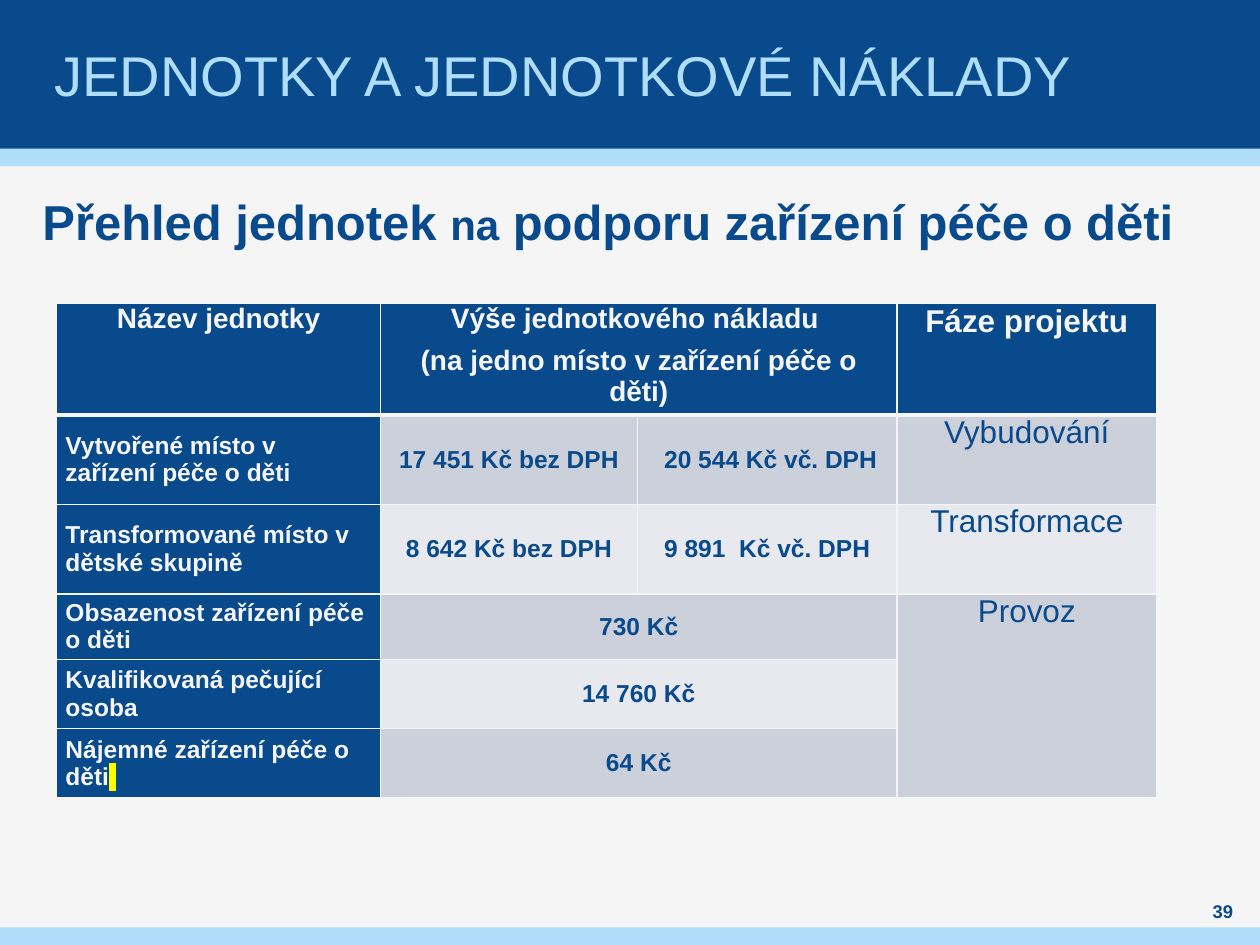
from dataclasses import dataclass

from lxml import etree
from pptx import Presentation
from pptx.dml.color import RGBColor
from pptx.enum.shapes import MSO_SHAPE
from pptx.enum.text import MSO_ANCHOR, PP_ALIGN
from pptx.oxml.ns import qn
from pptx.util import Inches, Pt

RECTANGLE = MSO_SHAPE.RECTANGLE
TOP, MIDDLE = MSO_ANCHOR.TOP, MSO_ANCHOR.MIDDLE
LEFT, CENTER = PP_ALIGN.LEFT, PP_ALIGN.CENTER


@dataclass(frozen=True)
class Theme:
    """Colours, font and type sizes of the deck."""
    font: str = "Arial"
    navy: str = "084A8B"
    sky: str = "AFDDFA"
    paper: str = "F5F5F5"
    band_dark: str = "CCD0DA"
    band_light: str = "E7E9EE"
    marker: str = "FFFF00"
    title: float = 32
    heading: float = 28
    heading_small: float = 24
    phase: float = 18
    header: float = 16
    body: float = 14
    number: float = 10.5


THEME = Theme()
COLUMNS = (2.57, 2.04, 2.06, 2.06)
ROWS = (0.88, 0.71, 0.71, 0.52, 0.55, 0.55)
HEADER = (
    (0, ("Název jednotky",), THEME.header),
    (1, ("Výše jednotkového nákladu ", "(na jedno místo v zařízení péče o děti)"), THEME.header),
    (3, ("Fáze projektu",), THEME.phase),
)
UNITS = (
    ("Vytvořené místo v zařízení péče o děti", ("17 451 Kč bez DPH", " 20 544 Kč vč. DPH"), "Vybudování"),
    ("Transformované místo v dětské skupině", ("8 642 Kč bez DPH", "9 891  Kč vč. DPH"), "Transformace"),
    ("Obsazenost zařízení péče o děti", ("730 Kč",), "Provoz"),
    ("Kvalifikovaná pečující osoba", ("14 760 Kč",), None),
    ("Nájemné zařízení péče o děti", ("64 Kč",), None),
)


def add_span(para, text, size, color, bold=False):
    """Append one styled run to a paragraph."""
    span = para.add_run()
    span.text = text
    span.font.name = THEME.font
    span.font.size = Pt(size)
    span.font.bold = bold
    span.font.color.rgb = RGBColor.from_string(color)
    return span


def highlight(span, color):
    """Put a marker colour behind a run."""
    mark = etree.Element(qn("a:highlight"))
    etree.SubElement(mark, qn("a:srgbClr"), val=color)
    span.font._element.find(qn("a:solidFill")).addnext(mark)


def add_bar(page, box, color):
    """Draw a plain band."""
    bar = page.shapes.add_shape(RECTANGLE, *map(Inches, box))
    bar.shadow.inherit = False
    bar.fill.solid()
    bar.fill.fore_color.rgb = RGBColor.from_string(color)
    bar.line.fill.background()


def add_text(page, box, spans, align, anchor=MIDDLE, insets=(0, 0)):
    """Place one paragraph of (text, size, color, bold) runs."""
    frame = page.shapes.add_textbox(*map(Inches, box)).text_frame
    frame.word_wrap = True
    frame.vertical_anchor = anchor
    frame.margin_left = frame.margin_right = Inches(insets[0])
    frame.margin_top = frame.margin_bottom = Inches(insets[1])
    para = frame.paragraphs[0]
    para.alignment = align
    for span in spans:
        add_span(para, *span)


def style_cell(cell, fill, bottom=1):
    """Give a cell its borders, insets and fill."""
    properties = cell._tc.get_or_add_tcPr()
    for side, width in (("L", 1), ("R", 1), ("T", 1), ("B", bottom)):
        line = etree.SubElement(properties, qn(f"a:ln{side}"), w=str(Pt(width)))
        paint = etree.SubElement(line, qn("a:solidFill"))
        etree.SubElement(paint, qn("a:srgbClr"), val=THEME.paper)
    cell.margin_left = cell.margin_right = Inches(0.07)
    cell.margin_top = cell.margin_bottom = 0
    cell.fill.solid()
    cell.fill.fore_color.rgb = RGBColor.from_string(fill)


def write_cell(cell, lines, size, color, bold=True, align=CENTER, anchor=MIDDLE):
    """Write each line as a paragraph and return the last one."""
    cell.vertical_anchor = anchor
    frame = cell.text_frame
    for index, line in enumerate(lines):
        para = frame.add_paragraph() if index else frame.paragraphs[0]
        para.alignment = align
        para.space_before = para.space_after = Pt(3)
        add_span(para, line, size, color, bold)
    return para


def add_unit_table(page, box):
    """Build the table of units, unit costs and project phases."""
    table = page.shapes.add_table(len(ROWS), len(COLUMNS), *map(Inches, box)).table
    for column, width in zip(table.columns, COLUMNS):
        column.width = Inches(width)
    for row, height in zip(table.rows, ROWS):
        row.height = Inches(height)
    for row in range(len(ROWS)):
        band = THEME.band_dark if row % 2 else THEME.band_light
        for column in range(len(COLUMNS)):
            fill = THEME.navy if row == 0 or column == 0 else band
            style_cell(table.cell(row, column), fill, 1 if row else 3)
    for row in (0, 3, 4, 5):
        table.cell(row, 1).merge(table.cell(row, 2))
    table.cell(3, 3).merge(table.cell(5, 3))

    for column, lines, size in HEADER:
        write_cell(table.cell(0, column), lines, size, THEME.paper, anchor=TOP)
    for row, (unit, costs, phase) in enumerate(UNITS, 1):
        para = write_cell(table.cell(row, 0), (unit,), THEME.body, THEME.paper, align=LEFT)
        for column, cost in enumerate(costs, 1):
            write_cell(table.cell(row, column), (cost,), THEME.body, THEME.navy)
        if phase:
            write_cell(table.cell(row, 3), (phase,), THEME.phase, THEME.navy, False, anchor=TOP)
    highlight(add_span(para, " ", THEME.body, THEME.paper, True), THEME.marker)


def add_banner(page, box):
    """Draw the title banner with its lower stripe."""
    left, top, width, height = box
    add_bar(page, (left, top + height, width, 0.14), THEME.sky)
    add_bar(page, box, THEME.navy)
    add_text(page, (left + 0.39, top, width - 0.79, height),
             [("JEDNOTKY A JEDNOTKOVÉ NÁKLADY", THEME.title, THEME.sky)], LEFT, insets=(0.04, 0))


def add_footer(page, box):
    """Draw the bottom stripe and the page number above it."""
    left, top, width, height = box
    add_bar(page, box, THEME.sky)
    add_text(page, (left + width - 0.55, top - 0.23, 0.51, 0.2),
             [("39", THEME.number, THEME.navy, True)], CENTER)


def add_heading(page, box):
    """Write the heading above the table."""
    parts = (("Přehled jednotek ", THEME.heading), ("na", THEME.heading_small),
             (" podporu zařízení péče o děti", THEME.heading))
    add_text(page, box, [(text, size, THEME.navy, True) for text, size in parts],
             CENTER, TOP, (0.1, 0.05))


def main():
    """Build and save the deck."""
    deck = Presentation()
    deck.slide_width, deck.slide_height = Inches(10), Inches(7.5)
    page = deck.slides.add_slide(deck.slide_layouts[6])
    page.background.fill.solid()
    page.background.fill.fore_color.rgb = RGBColor.from_string(THEME.paper)
    add_banner(page, (0, 0, 10, 1.18))
    add_footer(page, (0, 7.36, 10, 0.14))
    add_heading(page, (0.2, 1.47, 9.25, 0.57))
    add_unit_table(page, (0.45, 2.41, sum(COLUMNS), sum(ROWS)))
    deck.save("out.pptx")


if __name__ == "__main__":
    main()
